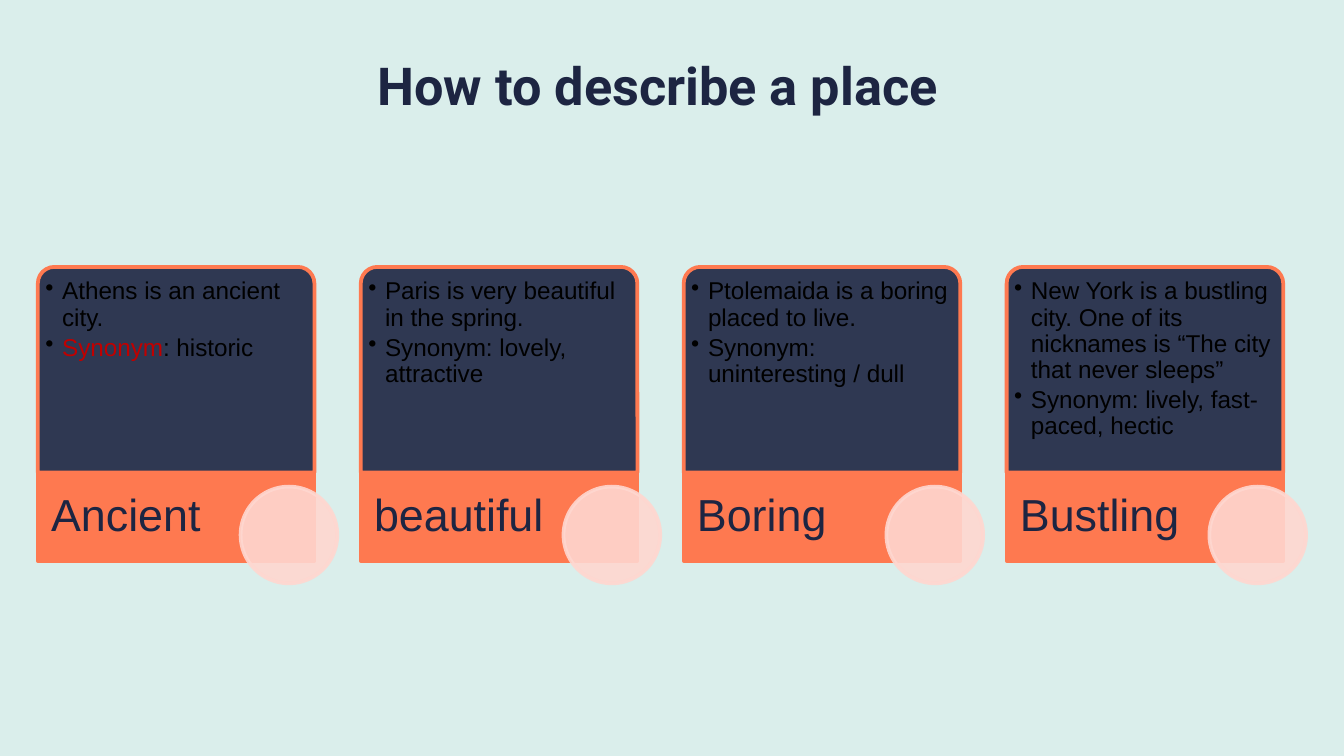
from lxml import etree
from pptx import Presentation
from pptx import util as u
from pptx.dml import color as dml
from pptx.enum import shapes, text
from pptx.oxml import ns

Pt = u.Pt
NAVY, ORANGE, PINK = "1D2542", "FE7950", "FFD7D0"
BLACK, RED, MINT = "000000", "C00000", "DAEEEB"

CARDS = [
    ("Ancient", [[("Athens is an ancient city.", BLACK)],
                 [("Synonym", RED), (": historic", BLACK)]]),
    ("beautiful", [[("Paris is very beautiful in the spring.", BLACK)],
                   [("Synonym: lovely, attractive", BLACK)]]),
    ("Boring", [[("Ptolemaida is a boring placed to live.", BLACK)],
                [("Synonym: uninteresting / dull", BLACK)]]),
    ("Bustling", [[("New York is a bustling city. One of its nicknames is "
                    "“The city that never sleeps”", BLACK)],
                  [("Synonym: lively, fast-paced, hectic", BLACK)]]),
]


def paint(color_format, value):
    """Set a colour format to a hex colour."""
    color_format.rgb = dml.RGBColor.from_string(value)


def set_alpha(properties, percent):
    """Make the colour of a solid fill partly transparent."""
    color = properties.find(ns.qn("a:solidFill"))[0]
    etree.SubElement(color, ns.qn("a:alpha"), val=str(percent * 1000))


def add_panel(slide, kind, box, fill, line, fill_alpha=100, line_alpha=100):
    """Add a filled and outlined preset shape."""
    shape = slide.shapes.add_shape(kind, *map(Pt, box))
    shape.shadow.inherit = False
    shape.fill.solid()
    paint(shape.fill.fore_color, fill)
    shape.line.width = Pt(2)
    shape.line.fill.solid()
    paint(shape.line.color, line)
    if fill_alpha < 100:
        set_alpha(shape._element.spPr, fill_alpha)
    if line_alpha < 100:
        set_alpha(shape.line._get_or_add_ln(), line_alpha)
    return shape


def add_frame(slide, box, insets, anchor=text.MSO_ANCHOR.TOP):
    """Add a wrapping text box and return its text frame."""
    frame = slide.shapes.add_textbox(*map(Pt, box)).text_frame
    frame.word_wrap = True
    frame.vertical_anchor = anchor
    (frame.margin_left, frame.margin_top,
     frame.margin_right, frame.margin_bottom) = map(Pt, insets)
    return frame


def add_run(paragraph, words, size, color, font="Arial", bold=False):
    """Add one formatted run to a paragraph."""
    run = paragraph.add_run()
    run.text = words
    run.font.size = Pt(size)
    run.font.name = font
    run.font.bold = bold
    paint(run.font.color, color)


def add_bullet(paragraph, indent):
    """Give a paragraph a black round bullet with a hanging indent."""
    properties = paragraph._p.get_or_add_pPr()
    properties.set("marL", str(Pt(indent)))
    properties.set("indent", str(-Pt(indent)))
    color = etree.SubElement(properties, ns.qn("a:buClr"))
    etree.SubElement(color, ns.qn("a:srgbClr"), val=BLACK)
    etree.SubElement(properties, ns.qn("a:buChar"), char="•")


def add_title(slide, box):
    """Place the centred slide title."""
    paragraph = add_frame(slide, box, [7.2] * 4).paragraphs[0]
    paragraph.alignment = text.PP_ALIGN.CENTER
    add_run(paragraph, "How to describe a place ", 28, NAVY, "Roboto", True)


def add_card(slide, box, label, bullets):
    """Place a card with bullets above a label bar and a circle."""
    left, top, width, height = box
    bar_height, diameter = 47.4, 51.8
    body_height = height - bar_height
    bar_top = top + body_height
    kinds = shapes.MSO_SHAPE

    body = add_panel(slide, kinds.ROUND_2_SAME_RECTANGLE,
                     (left, top, width, body_height), NAVY, ORANGE, 90)
    body.adjustments[0], body.adjustments[1] = 0.08, 0
    frame = add_frame(slide, (left + 2.6, top + 2.6, width - 5.2, body_height - 2.6),
                      (1.4, 3.8, 1.4, 1.4))
    for index, runs in enumerate(bullets):
        paragraph = frame.add_paragraph() if index else frame.paragraphs[0]
        paragraph.line_spacing = 0.9
        paragraph.space_after = Pt(2)
        add_bullet(paragraph, 9)
        for words, color in runs:
            add_run(paragraph, words, 13, color)

    add_panel(slide, kinds.RECTANGLE, (left, bar_top, width, bar_height), ORANGE, ORANGE)
    frame = add_frame(slide, (left, bar_top, 104.4, bar_height), (7.2, 0, 2.4, 0),
                      text.MSO_ANCHOR.MIDDLE)
    frame.paragraphs[0].line_spacing = 0.9
    add_run(frame.paragraphs[0], label, 24, NAVY)
    add_panel(slide, kinds.OVAL, (left + 108.6, bar_top + 7.5, diameter, diameter),
              PINK, PINK, 90, 90)


def main():
    """Build and save the slide."""
    presentation = Presentation()
    presentation.slide_width, presentation.slide_height = Pt(720), Pt(405)
    slide = presentation.slides.add_slide(presentation.slide_layouts[6])
    slide.background.fill.solid()
    paint(slide.background.fill.fore_color, MINT)
    add_title(slide, (0, 21.6, 711.4, 43.2))
    for index, (label, bullets) in enumerate(CARDS):
        add_card(slide, (20.3 + 173 * index, 143, 148.2, 157.6), label, bullets)
    presentation.save("out.pptx")


if __name__ == "__main__":
    main()
